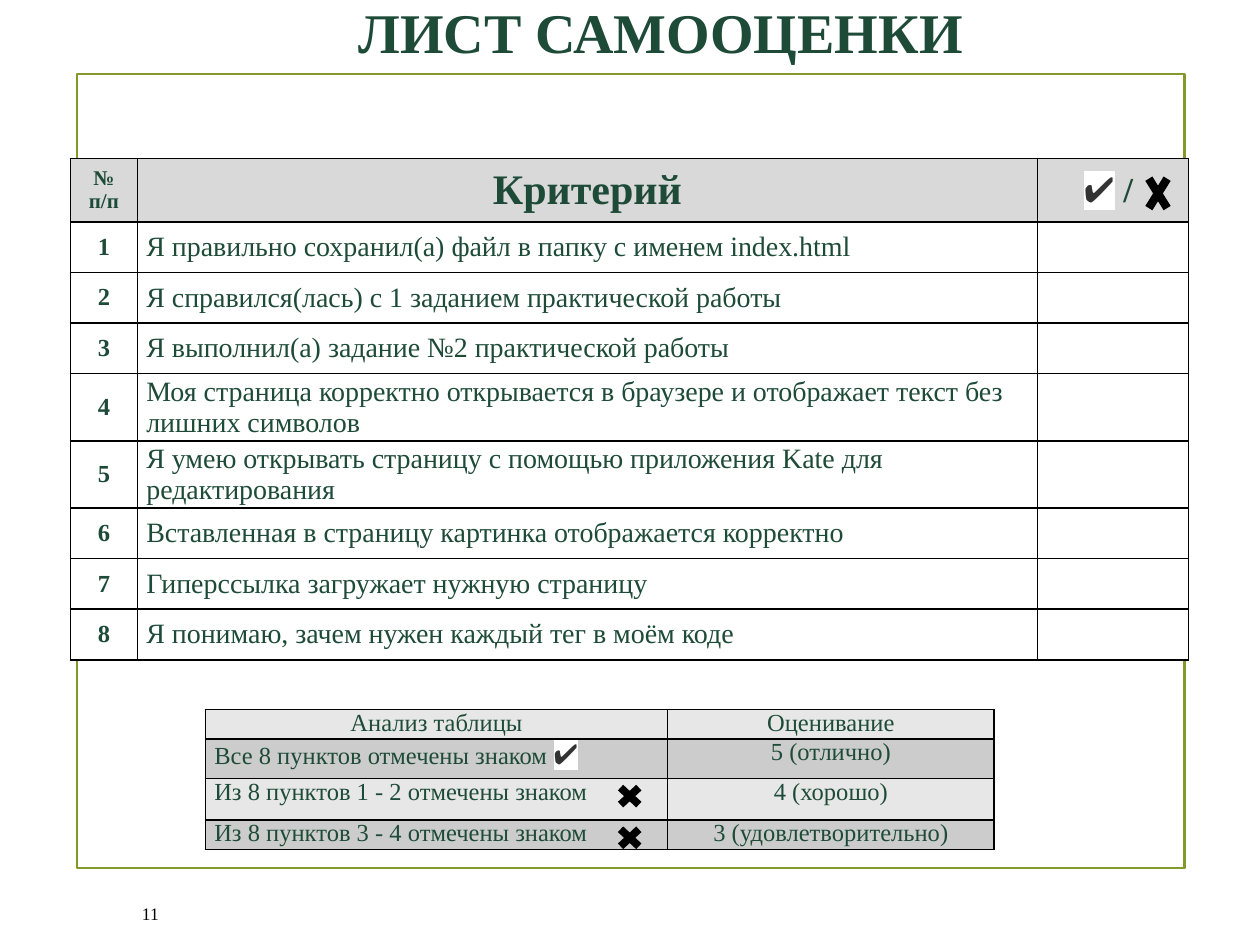
"""Builds a self-assessment sheet slide with a criteria table and a grading table."""
from lxml import etree
from pptx import Presentation
from pptx import util as u
from pptx.dml.color import RGBColor
from pptx.enum import shapes, text
from pptx.oxml.ns import qn

SERIF, GREEN, BLACK, WHITE = "Times New Roman", "1E4B38", "000000", "FFFFFF"
TICK = "✔"
LEFT, CENTER, RIGHT = text.PP_ALIGN.LEFT, text.PP_ALIGN.CENTER, text.PP_ALIGN.RIGHT
MIDDLE, TOP = text.MSO_ANCHOR.MIDDLE, text.MSO_ANCHOR.TOP

TITLE = "ЛИСТ САМООЦЕНКИ"
CRITERIA_HEAD = ["№ п/п", "Критерий", TICK + " / "]
CRITERIA = [
    "Я правильно сохранил(а) файл в папку с именем index.html",
    "Я справился(лась) с 1 заданием практической работы",
    "Я выполнил(а) задание №2 практической работы",
    "Моя страница корректно открывается в браузере и отображает текст без лишних символов",
    "Я умею открывать страницу с помощью приложения Kate для редактирования",
    "Вставленная в страницу картинка отображается корректно",
    "Гиперссылка загружает нужную страницу",
    "Я понимаю, зачем нужен каждый тег в моём коде",
]
GRADES = [
    ("Анализ таблицы", "Оценивание"),
    ("Все 8 пунктов отмечены знаком " + TICK, "5 (отлично)"),
    ("Из 8 пунктов 1 - 2 отмечены знаком", "4 (хорошо)"),
    ("Из 8 пунктов 3 - 4 отмечены знаком", "3 (удовлетворительно)"),
]
CRITERIA_COLS = [1.35, 18.14, 3.05]
CRITERIA_ROWS = [1.27] + [1.35 if len(line) > 60 else 1.02 for line in CRITERIA]
GRADE_COLS, GRADE_ROWS = [9.32, 6.58], [0.6, 0.79, 0.84, 0.58]
CROSSES = [(22.99, 3.33, 0.71, 1.14), (12.34, 16.56, 0.71, 0.66), (12.34, 15.72, 0.71, 0.66)]


def rgb(color):
    return RGBColor.from_string(color)


def cm(*lengths):
    return [u.Cm(length) for length in lengths]


def style(run, size, color=GREEN, bold=False, font=SERIF):
    run.font.size, run.font.bold, run.font.name = u.Pt(size), bold, font
    run.font.color.rgb = rgb(color)


def write(frame, words, size, align, color=GREEN, bold=False, tick_size=20):
    paragraph = frame.paragraphs[0]
    paragraph.alignment = align
    before, tick, after = words.partition(TICK)
    for part in filter(None, (before, tick, after)):
        run = paragraph.add_run()
        run.text = part
        if part != TICK:
            style(run, size, color, bold)
            continue
        style(run, tick_size, "333333", font="Arial")
        highlight = etree.Element(qn("a:highlight"))
        etree.SubElement(highlight, qn("a:srgbClr"), val=WHITE)
        run.font._element.find(qn("a:solidFill")).addnext(highlight)


def dress(cell, fill, anchor, tight=False):
    cell.fill.solid()
    cell.fill.fore_color.rgb = rgb(fill)
    cell.vertical_anchor = anchor
    if tight:
        cell.margin_left = cell.margin_right = u.Cm(0.18)
        cell.margin_top = cell.margin_bottom = 0
    properties = cell._tc.get_or_add_tcPr()
    for index, side in enumerate(("lnL", "lnR", "lnT", "lnB")):
        border = etree.Element(qn("a:" + side), w=str(u.Pt(1)))
        paint = etree.SubElement(border, qn("a:solidFill"))
        etree.SubElement(paint, qn("a:srgbClr"), val=BLACK)
        properties.insert(index, border)


def add_grid(slide, left, top, cols, rows):
    place = cm(left, top, sum(cols), sum(rows))
    grid = slide.shapes.add_table(len(rows), len(cols), *place).table
    grid.first_row = grid.horz_banding = False
    for column, width in zip(grid.columns, cols):
        column.width = u.Cm(width)
    for row, height in zip(grid.rows, rows):
        row.height = u.Cm(height)
    return grid


def add_criteria(slide):
    grid = add_grid(slide, 1.42, 3.2, CRITERIA_COLS, CRITERIA_ROWS)
    for col, (words, size) in enumerate(zip(CRITERIA_HEAD, (12, 24, 20))):
        cell = grid.cell(0, col)
        write(cell.text_frame, words, size, CENTER, bold=True)
        dress(cell, "D9D9D9", MIDDLE)
    for number, criterion in enumerate(CRITERIA, 1):
        index, wording, mark = (grid.cell(number, col) for col in range(3))
        write(index.text_frame, str(number), 14, CENTER, bold=True)
        write(wording.text_frame, criterion, 16, LEFT)
        for cell in (index, wording, mark):
            dress(cell, WHITE, MIDDLE, tight=cell is wording)


def add_grades(slide):
    grid = add_grid(slide, 4.14, 14.3, GRADE_COLS, GRADE_ROWS)
    for row, entries in enumerate(GRADES):
        for col, words in enumerate(entries):
            cell = grid.cell(row, col)
            align = LEFT if row and not col else CENTER
            write(cell.text_frame, words, 14, align, tick_size=16)
            dress(cell, ("E7E7E7", "CCCCCC")[row % 2], TOP, tight=True)


def main():
    deck = Presentation()
    deck.slide_width, deck.slide_height = cm(25.4, 19.05)
    slide = deck.slides.add_slide(deck.slide_layouts[5])

    frame = slide.shapes.add_shape(shapes.MSO_SHAPE.RECTANGLE, *cm(1.55, 1.5, 22.33, 16))
    frame.shadow.inherit = False
    frame.fill.background()
    frame.line.color.rgb, frame.line.width = rgb("83992A"), u.Pt(1.25)

    title = slide.shapes.title
    title.left, title.top, title.width, title.height = cm(2.95, -0.18, 20.75, 1.63)
    title.text_frame.vertical_anchor = MIDDLE
    write(title.text_frame, TITLE, 32, CENTER, bold=True)

    number = slide.shapes.add_textbox(*cm(0.76, 17.91, 2.69, 1.02)).text_frame
    number.word_wrap, number.vertical_anchor = True, MIDDLE
    write(number, "11", 10, RIGHT, BLACK)

    add_criteria(slide)
    add_grades(slide)
    for place in CROSSES:
        cross = slide.shapes.add_shape(shapes.MSO_SHAPE.MATH_MULTIPLY, *cm(*place))
        cross.shadow.inherit = False
        cross.fill.solid()
        cross.fill.fore_color.rgb = rgb(BLACK)
        cross.line.fill.background()

    deck.save("out.pptx")


if __name__ == "__main__":
    main()
